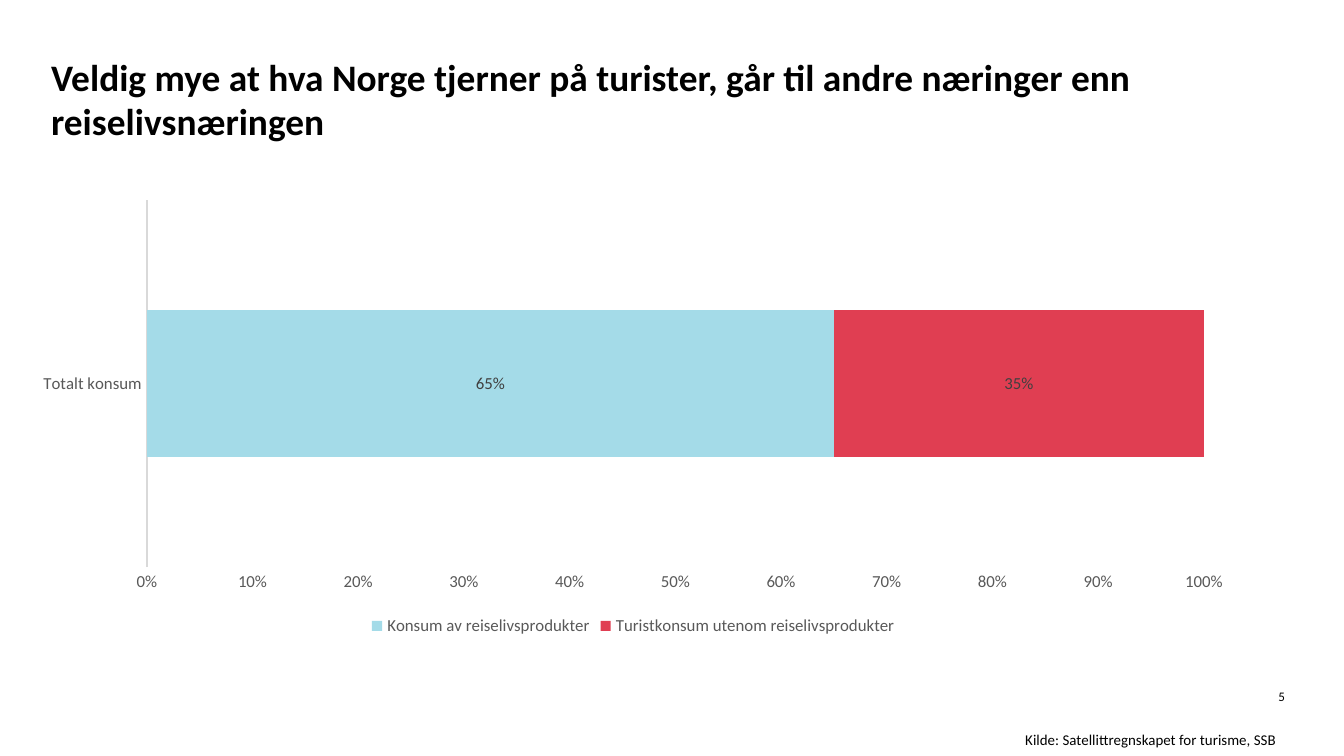
from dataclasses import dataclass

from pptx import Presentation
from pptx.chart.data import CategoryChartData
from pptx.dml.color import RGBColor
from pptx.enum.chart import XL_CHART_TYPE, XL_LEGEND_POSITION, XL_TICK_MARK
from pptx.enum.text import MSO_ANCHOR, PP_ALIGN
from pptx.util import Inches, Pt

BAR_STACKED = XL_CHART_TYPE.BAR_STACKED
LEGEND_BOTTOM = XL_LEGEND_POSITION.BOTTOM
NO_TICK = XL_TICK_MARK.NONE
TOP = MSO_ANCHOR.TOP
LEFT, RIGHT = PP_ALIGN.LEFT, PP_ALIGN.RIGHT
TITLE_ONLY = 5
PERCENT = "0%"
SLIDE_WIDTH = Inches(10)
SLIDE_HEIGHT = SLIDE_WIDTH * 9 // 16


@dataclass(frozen=True)
class Theme:
    font: str = "Calibri"
    text: str = "000000"
    background: str = "FFFFFF"
    axis_text: str = "595959"
    label_text: str = "404040"
    axis_line: str = "D9D9D9"
    title_size: float = 20
    chart_size: float = 10
    axis_size: float = 9
    source_size: float = 8
    number_size: float = 7


@dataclass(frozen=True)
class Box:
    left: float
    top: float
    width: float
    height: float

    def lengths(self) -> tuple:
        return tuple(map(Inches, (self.left, self.top, self.width, self.height)))


@dataclass(frozen=True)
class Consumption:
    name: str
    share: float
    color: str


@dataclass(frozen=True)
class Note:
    text: str
    box: Box
    size: float
    align: PP_ALIGN
    margins: tuple
    wrap: bool


THEME = Theme()
TITLE = "Veldig mye at hva Norge tjerner på turister, går til andre næringer enn reiselivsnæringen"
CONSUMPTION = (
    Consumption("Konsum av reiselivsprodukter", 0.65, "A4DBE8"),
    Consumption("Turistkonsum utenom reiselivsprodukter", 0.35, "E03E52"),
)
NOTES = (
    Note("Kilde: Satellittregnskapet for turisme, SSB", Box(7.53, 5.39, 2.09, 0.24),
         THEME.source_size, LEFT, (0.1, 0.05), False),
    Note("5", Box(9.17, 5.12, 0.39, 0.12), THEME.number_size, RIGHT, (0, 0), True),
)


def style_font(font, size: float, color: str, bold: bool = False) -> None:
    font.name = THEME.font
    font.size = Pt(size)
    font.bold = bold
    font.color.rgb = RGBColor.from_string(color)


def fill_solid(fill, color: str) -> None:
    fill.solid()
    fill.fore_color.rgb = RGBColor.from_string(color)


def set_margins(text_frame, horizontal: float, vertical: float) -> None:
    text_frame.margin_left = text_frame.margin_right = Inches(horizontal)
    text_frame.margin_top = text_frame.margin_bottom = Inches(vertical)


def write_line(text_frame, text: str, align: PP_ALIGN, size: float, bold: bool = False) -> None:
    text_frame.text = text
    text_frame.vertical_anchor = TOP
    paragraph = text_frame.paragraphs[0]
    paragraph.alignment = align
    style_font(paragraph.runs[0].font, size, THEME.text, bold)


def place_title(slide) -> None:
    title = slide.shapes.title
    title.left, title.top, title.width, title.height = Box(0.38, 0.4, 9.14, 0.88).lengths()
    fill_solid(title.fill, THEME.background)
    set_margins(title.text_frame, 0, 0)
    title.text_frame.word_wrap = True
    write_line(title.text_frame, TITLE, LEFT, THEME.title_size, bold=True)


def add_note(slide, note: Note) -> None:
    text_frame = slide.shapes.add_textbox(*note.box.lengths()).text_frame
    set_margins(text_frame, *note.margins)
    text_frame.word_wrap = note.wrap
    write_line(text_frame, note.text, note.align, note.size)


def style_axis(axis) -> None:
    axis.has_major_gridlines = False
    axis.major_tick_mark = axis.minor_tick_mark = NO_TICK
    style_font(axis.tick_labels.font, THEME.axis_size, THEME.axis_text)


def add_consumption_chart(slide) -> None:
    data = CategoryChartData(number_format=PERCENT)
    data.categories = ["Totalt konsum"]
    for part in CONSUMPTION:
        data.add_series(part.name, [part.share])
    box = Box(0.14, 1.42, 9.14, 3.35)
    chart = slide.shapes.add_chart(BAR_STACKED, *box.lengths(), data).chart
    style_font(chart.font, THEME.chart_size, THEME.text)
    chart.has_title = False

    chart.has_legend = True
    chart.legend.position = LEGEND_BOTTOM
    chart.legend.include_in_layout = False
    style_font(chart.legend.font, THEME.axis_size, THEME.axis_text)

    style_axis(chart.category_axis)
    category_line = chart.category_axis.format.line
    category_line.width = Pt(0.75)
    fill_solid(category_line.fill, THEME.axis_line)

    value_axis = chart.value_axis
    style_axis(value_axis)
    value_axis.maximum_scale = 1
    value_axis.tick_labels.number_format = PERCENT
    value_axis.tick_labels.number_format_is_linked = False
    value_axis.format.line.fill.background()

    plot = chart.plots[0]
    plot.vary_by_categories = False
    plot.gap_width, plot.overlap = 150, 100
    for series, part in zip(plot.series, CONSUMPTION):
        fill_solid(series.format.fill, part.color)
        labels = series.data_labels
        labels.show_value = True
        labels.number_format = PERCENT
        labels.number_format_is_linked = False
        style_font(labels.font, THEME.axis_size, THEME.label_text)


def main() -> None:
    presentation = Presentation()
    presentation.slide_width, presentation.slide_height = SLIDE_WIDTH, SLIDE_HEIGHT
    slide = presentation.slides.add_slide(presentation.slide_layouts[TITLE_ONLY])
    fill_solid(slide.background.fill, THEME.background)
    place_title(slide)
    add_consumption_chart(slide)
    for note in NOTES:
        add_note(slide, note)
    presentation.save("out.pptx")


if __name__ == "__main__":
    main()
